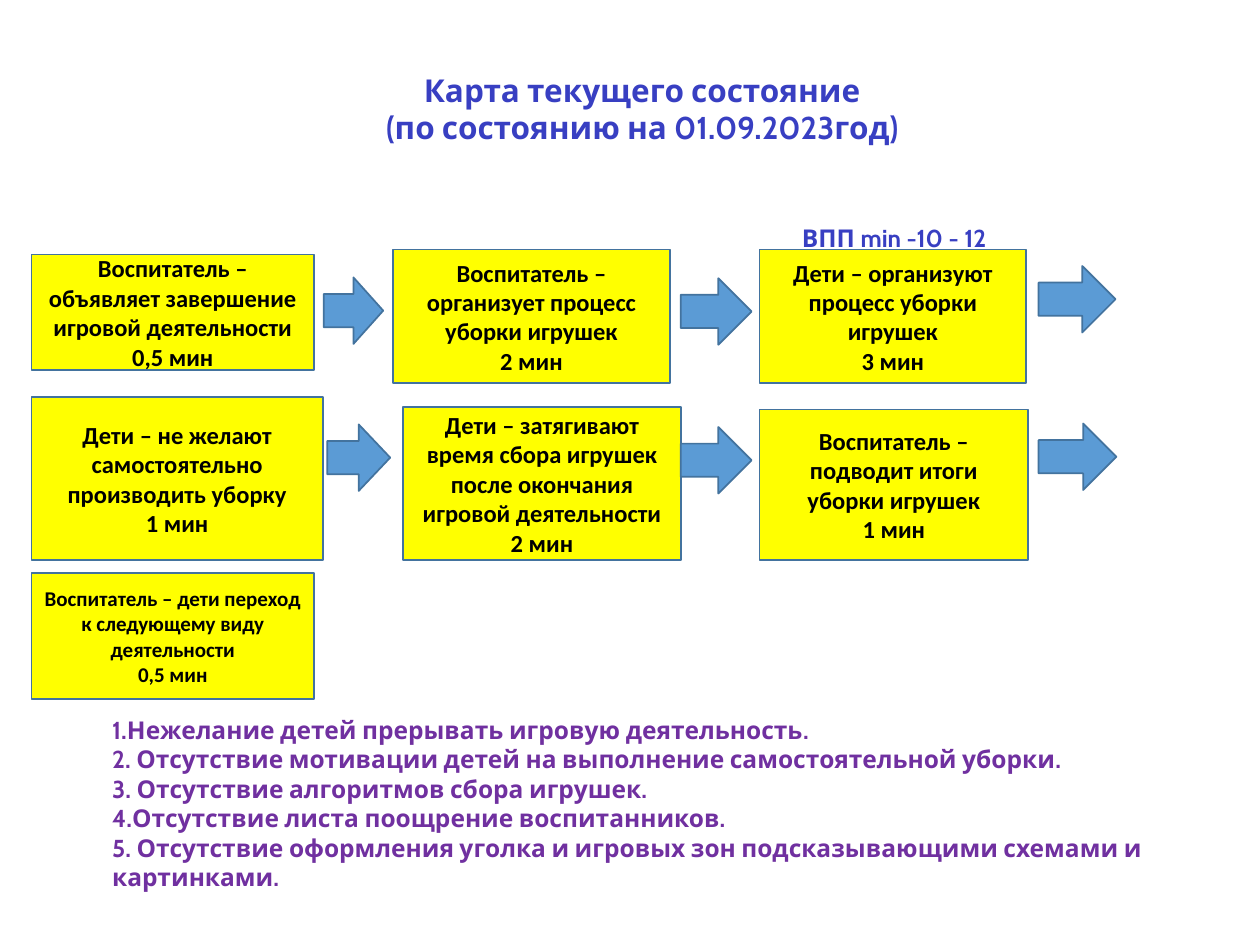
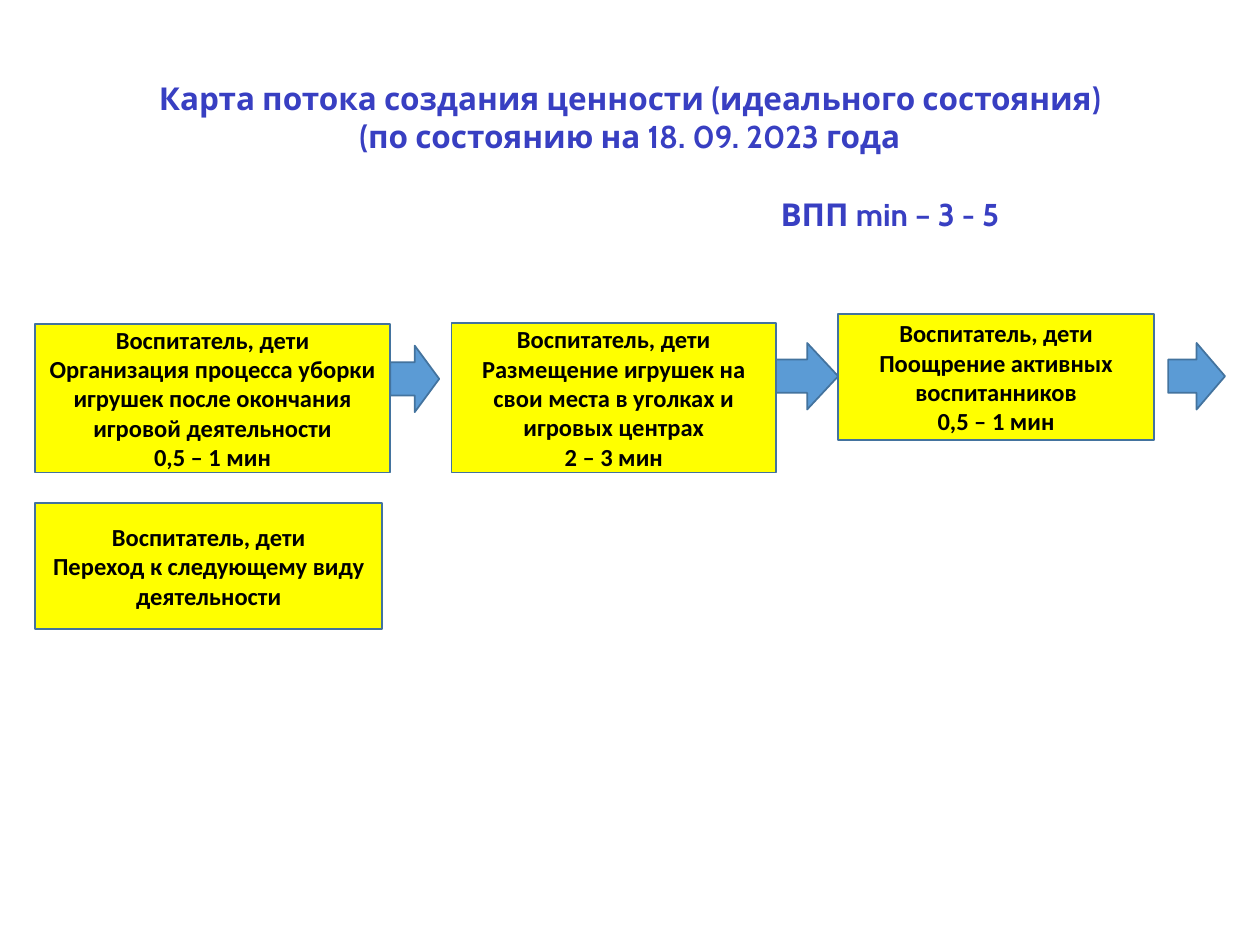
"""Build two process maps of toy tidying: the current state and the ideal state."""
import dataclasses

import pptx
import pptx.dml.color
import pptx.enum.shapes
import pptx.enum.text
import pptx.util

Pt = pptx.util.Pt
Shape = pptx.enum.shapes.MSO_SHAPE
Align = pptx.enum.text.PP_ALIGN
Anchor = pptx.enum.text.MSO_ANCHOR


@dataclasses.dataclass(frozen=True)
class Theme:
    heading: str = "383FC2"
    problem: str = "7030A0"
    step: str = "FFFF00"
    step_text: str = "000000"
    arrow: str = "5B9BD5"
    outline: str = "43739E"
    display_font: str = "Cabin"
    step_font: str = "Calibri"
    heading_size: int = 18
    body_size: int = 14
    small_size: int = 12
    outline_width: int = 1
    arrow_height: int = 38


def rgb(value):
    return pptx.dml.color.RGBColor.from_string(value)


def write_text(frame, text, *, font, size, color, align=Align.CENTER, anchor=Anchor.MIDDLE):
    frame.word_wrap = True
    frame.vertical_anchor = anchor
    frame.text = text
    for paragraph in frame.paragraphs:
        paragraph.alignment = align
        paragraph.font.name = font
        paragraph.font.size = Pt(size)
        paragraph.font.bold = True
        paragraph.font.color.rgb = rgb(color)


class ProcessMap:
    def __init__(self, deck, theme):
        self.deck = deck
        self.theme = theme
        self.slide = None

    def new_slide(self):
        self.slide = self.deck.slides.add_slide(self.deck.slide_layouts[6])

    def block(self, preset, left, top, width, height, fill):
        block = self.slide.shapes.add_shape(preset, Pt(left), Pt(top), Pt(width), Pt(height))
        block.shadow.inherit = False
        block.fill.solid()
        block.fill.fore_color.rgb = rgb(fill)
        block.line.color.rgb = rgb(self.theme.outline)
        block.line.width = Pt(self.theme.outline_width)
        return block

    def label(self, left, top, width, height, text, **style):
        box = self.slide.shapes.add_textbox(Pt(left), Pt(top), Pt(width), Pt(height))
        box.text_frame.margin_top = box.text_frame.margin_bottom = 0
        write_text(box.text_frame, text, font=self.theme.display_font, **style)

    def heading(self, left, top, text):
        self.label(left, top, 610, 44, text, size=self.theme.heading_size, color=self.theme.heading)

    def lead_time(self, left, top, text, size):
        self.label(left, top, 160, 22, text, size=size, color=self.theme.heading)

    def problems(self, left, top, width, height, text):
        self.label(left, top, width, height, text, size=self.theme.body_size,
                   color=self.theme.problem, align=Align.LEFT, anchor=Anchor.TOP)

    def step(self, left, top, width, height, text, size=None):
        step = self.block(Shape.RECTANGLE, left, top, width, height, self.theme.step)
        write_text(step.text_frame, text, font=self.theme.step_font,
                   size=size or self.theme.body_size, color=self.theme.step_text)

    def arrow(self, left, top, width):
        self.block(Shape.RIGHT_ARROW, left, top, width, self.theme.arrow_height, self.theme.arrow)

    def flow(self, steps, arrows):
        for step in steps:
            self.step(*step)
        for arrow in arrows:
            self.arrow(*arrow)


def current_state(page):
    page.new_slide()
    page.heading(62, 40, "Карта текущего состояние\n(по состоянию на 01.09.2023год)")
    page.lead_time(431, 125, "ВПП min -10 - 12", page.theme.body_size)
    page.problems(57, 408.5, 644, 104, "\n".join([
        "1.Нежелание детей прерывать игровую деятельность.",
        "2. Отсутствие мотивации детей на выполнение самостоятельной уборки.",
        "3. Отсутствие алгоритмов сбора игрушек.",
        "4.Отсутствие листа поощрение воспитанников.",
        "5. Отсутствие оформления уголка и игровых зон подсказывающими схемами и картинками.",
    ]))
    page.flow(
        steps=[
            (18, 145.5, 161.5, 66, "Воспитатель –объявляет завершение игровой деятельности\n0,5 мин"),
            (224.5, 142.5, 158.5, 76.5, "Воспитатель – организует процесс уборки игрушек\n2 мин"),
            (434, 142.5, 152.5, 76.5, "Дети – организуют процесс уборки игрушек\n3 мин"),
            (18, 227, 166.5, 93, "Дети – не желают самостоятельно производить уборку\n1 мин"),
            (230.5, 232.5, 158.5, 87.5,
             "Дети – затягивают время сбора игрушек после окончания игровой деятельности\n2 мин"),
            (434, 234, 153.5, 86, "Воспитатель – подводит итоги уборки игрушек\n1 мин"),
            (18, 327.5, 161.5, 72,
             "Воспитатель – дети переход к следующему виду деятельности\n0,5 мин",
             page.theme.small_size),
        ],
        arrows=[
            (185, 158.5, 34), (389, 159, 40.5), (593.5, 152, 44),
            (187, 242.5, 36), (389, 244, 40.5), (593.5, 242, 44.5),
        ],
    )


def ideal_state(page):
    page.new_slide()
    page.heading(55, 45, "Карта потока создания ценности (идеального состояния)\n"
                         "(по состоянию на 18. 09. 2023 года")
    page.lead_time(428.5, 111, "ВПП min – 3 - 5", page.theme.heading_size)
    actors = "Воспитатель, дети\n"
    page.flow(
        steps=[
            (20, 185, 203, 85, actors + "Организация процесса уборки игрушек "
                                        "после окончания игровой деятельности\n0,5 – 1 мин"),
            (258, 184.5, 185.5, 85.5, actors + "Размещение игрушек на свои места в уголках "
                                               "и игровых центрах\n2 – 3 мин"),
            (479, 179.5, 180.5, 72, actors + "Поощрение активных воспитанников\n0,5 – 1 мин"),
            (20, 287.5, 198.5, 72, actors + "Переход к следующему виду деятельности"),
        ],
        arrows=[(223, 197.5, 28), (443.5, 196, 35.5), (667.5, 196, 32.5)],
    )


def main():
    deck = pptx.Presentation()
    deck.slide_width, deck.slide_height = Pt(720), Pt(540)
    page = ProcessMap(deck, Theme())
    current_state(page)
    ideal_state(page)
    deck.save("out.pptx")


if __name__ == "__main__":
    main()
